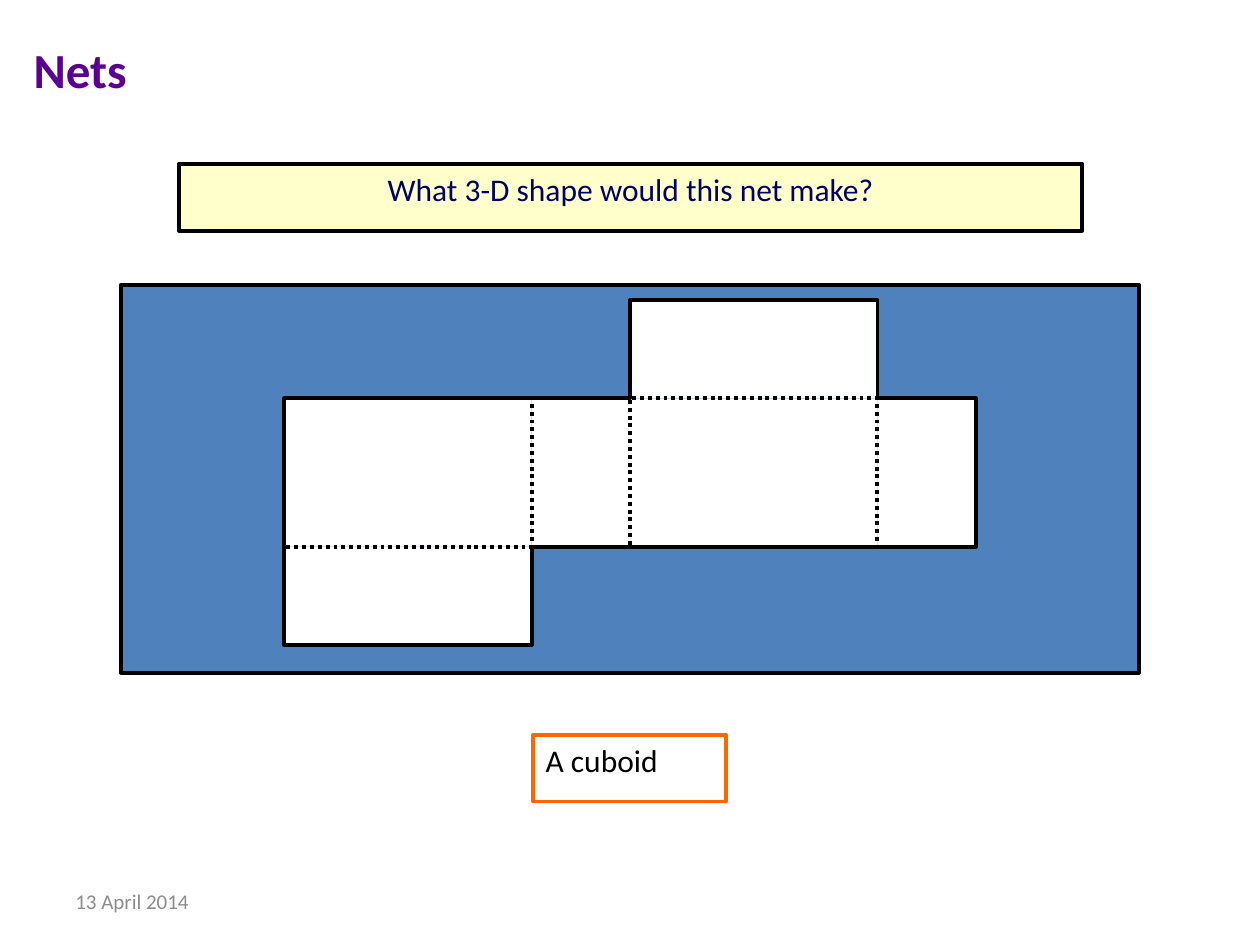
from pptx import Presentation
from pptx.dml.color import RGBColor
from pptx.enum.dml import MSO_LINE
from pptx.enum.shapes import MSO_SHAPE
from pptx.enum.text import MSO_ANCHOR, PP_ALIGN
from pptx.util import Cm, Pt

RECTANGLE = MSO_SHAPE.RECTANGLE
DOTTED = MSO_LINE.ROUND_DOT
LEFT, CENTER = PP_ALIGN.LEFT, PP_ALIGN.CENTER
TOP, MIDDLE = MSO_ANCHOR.TOP, MSO_ANCHOR.MIDDLE

THEME = {
    "font": "Calibri", "line": 2.25,
    "title_size": 28, "body_size": 18, "date_size": 12,
    "title": "5B0091", "question": "000066", "ink": "000000", "date": "8C8C8C",
    "panel": "4F81BD", "cream": "FFFFCC", "paper": "FFFFFF", "orange": "FF6600",
}

# Boxes are left, top, width, height in cm
PANEL = (2.44, 5.74, 20.52, 7.82)
TITLE = ("Nets", (0.43, 0.43, 19.89, 1.9))
QUESTION = ("What 3-D shape would this net make?", (3.61, 3.3, 18.21, 1.35))
ANSWER = ("A cuboid", (10.75, 14.81, 3.89, 1.35))
DATE = ("13 April 2014", (1.27, 17.65, 5.92, 1.02))

# The cuboid's edges, and the top left corner of its net, in cm
LENGTH, HEIGHT, DEPTH = 4.99, 2.99, 1.98
NET_LEFT, NET_TOP = 5.73, 6.05


def edges(start, sizes):
    """Positions of the fold lines when faces of these sizes lie side by side."""
    return [start + sum(sizes[:count]) for count in range(len(sizes) + 1)]


XS = edges(NET_LEFT, (LENGTH, DEPTH, LENGTH, DEPTH))
YS = edges(NET_TOP, (DEPTH, HEIGHT, DEPTH))

# Faces and outline corners as (column, row) of the fold grid
PLAIN_FACES = [(3, 1), (1, 1), (0, 2), (2, 0)]
FOLDED_FACES = [(0, 1), (2, 1)]
OUTLINE = [(0, 3), (0, 1), (2, 1), (2, 0), (3, 0), (3, 1),
           (4, 1), (4, 2), (1, 2), (1, 3)]


def color(name):
    return RGBColor.from_string(THEME[name])


def style(shape, fill=None, line=None):
    shape.shadow.inherit = False
    if fill:
        shape.fill.solid()
        shape.fill.fore_color.rgb = color(fill)
    else:
        shape.fill.background()
    if line:
        shape.line.color.rgb = color(line)
        shape.line.width = Pt(THEME["line"])
    else:
        shape.line.fill.background()


def add_box(shapes, place, fill=None, line=None):
    box = shapes.add_shape(RECTANGLE, *map(Cm, place))
    style(box, fill, line)
    return box


def write(box, text, size, ink, align=LEFT, anchor=TOP, bold=False):
    frame = box.text_frame
    frame.word_wrap = True
    frame.vertical_anchor = anchor
    para = frame.paragraphs[0]
    para.text = text
    para.alignment = align
    para.font.name = THEME["font"]
    para.font.size = Pt(THEME[size])
    para.font.color.rgb = color(ink)
    para.font.bold = bold


def add_label(page, text, place, *args, **kwargs):
    write(page.shapes.add_textbox(*map(Cm, place)), text, *args, **kwargs)


def add_face(shapes, column, row, line=None):
    left, top = XS[column], YS[row]
    place = (left, top, XS[column + 1] - left, YS[row + 1] - top)
    return add_box(shapes, place, "paper", line)


def add_net(page):
    net = page.shapes.add_group_shape().shapes
    for column, row in PLAIN_FACES:
        add_face(net, column, row)
    for column, row in FOLDED_FACES:
        add_face(net, column, row, "ink").line.dash_style = DOTTED
    corners = [(Cm(XS[column]), Cm(YS[row])) for column, row in OUTLINE]
    builder = net.build_freeform(*corners[0])
    builder.add_line_segments(corners[1:], close=True)
    style(builder.convert_to_shape(), line="ink")


def main():
    deck = Presentation()
    deck.slide_width, deck.slide_height = Cm(25.4), Cm(19.05)
    page = deck.slides.add_slide(deck.slide_layouts[6])

    add_box(page.shapes, PANEL, "panel", "ink")
    add_label(page, *TITLE, "title_size", "title", anchor=MIDDLE, bold=True)

    text, place = QUESTION
    box = add_box(page.shapes, place, "cream", "ink")
    write(box, text, "body_size", "question", align=CENTER)

    text, place = ANSWER
    box = add_box(page.shapes, place, line="orange")
    write(box, text, "body_size", "ink")

    add_net(page)
    add_label(page, *DATE, "date_size", "date", anchor=MIDDLE)
    deck.save("out.pptx")


if __name__ == "__main__":
    main()
